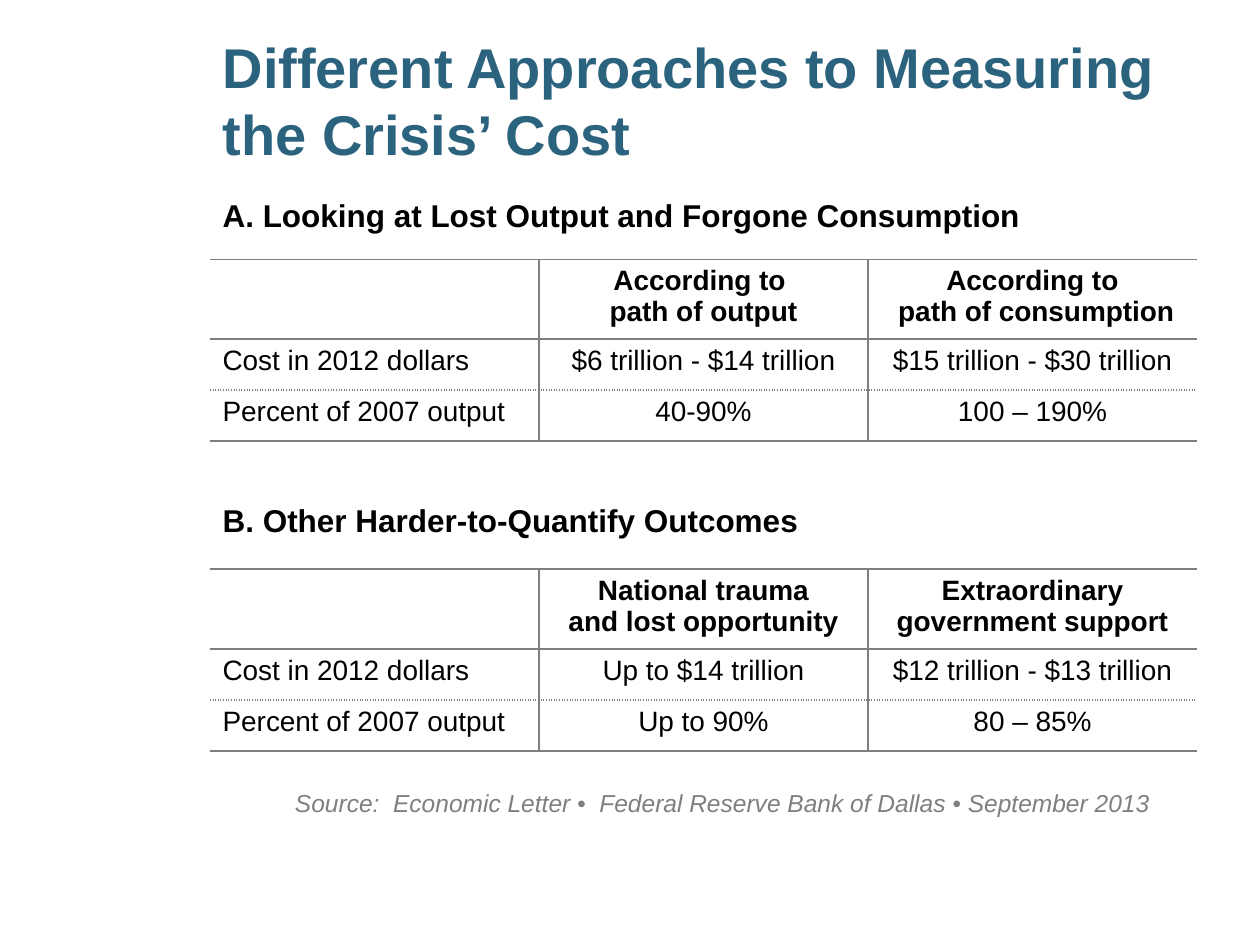
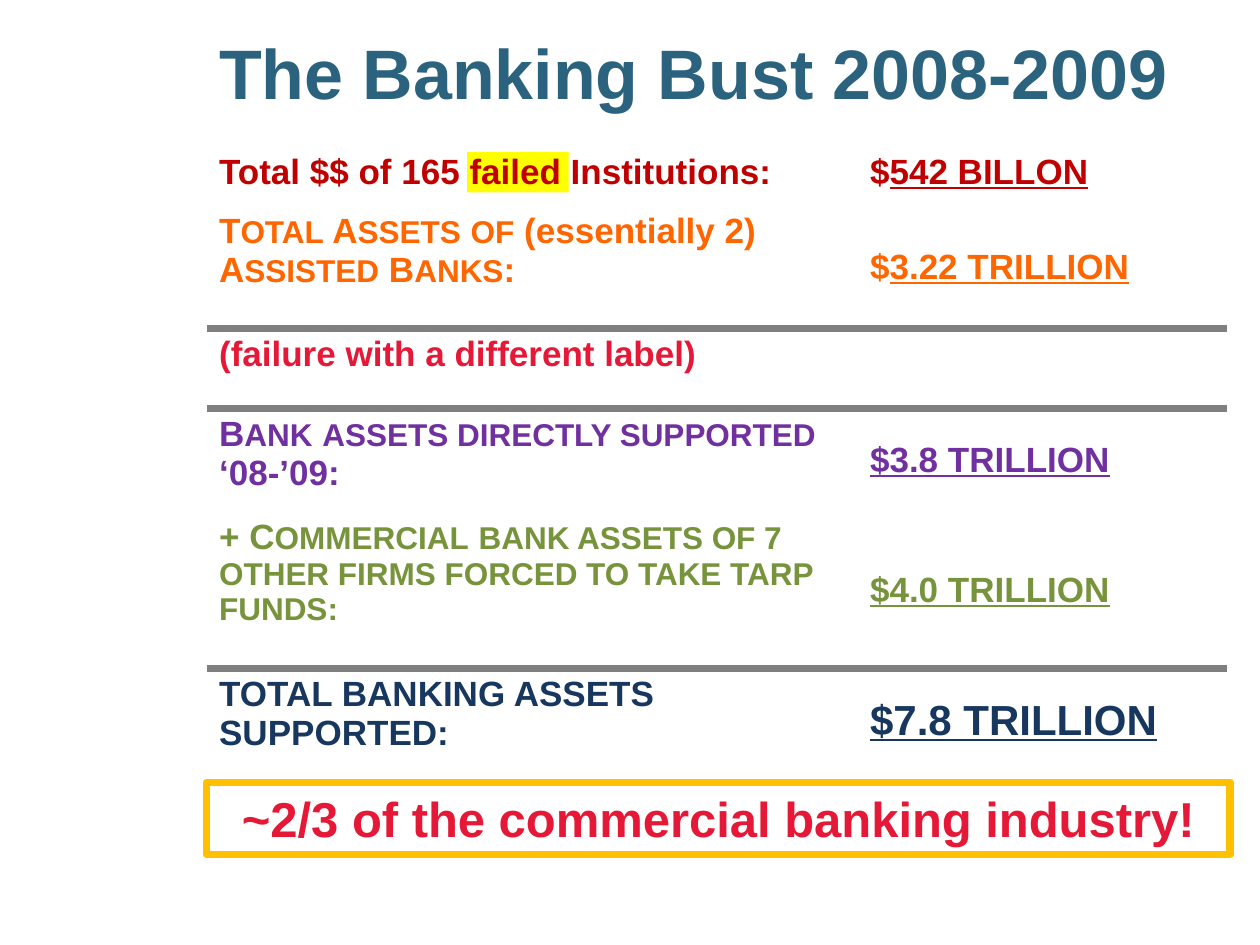
"""Build two slides on the cost of the crisis and the support given to banks."""
from dataclasses import dataclass
from itertools import cycle
from typing import Optional

from lxml import etree
from pptx import Presentation
from pptx.dml.color import RGBColor
from pptx.enum.shapes import MSO_SHAPE
from pptx.enum.text import MSO_ANCHOR, MSO_AUTO_SIZE, PP_ALIGN
from pptx.oxml import parse_xml
from pptx.oxml.ns import nsdecls, qn
from pptx.util import Pt

LEFT, CENTER = PP_ALIGN.LEFT, PP_ALIGN.CENTER
TOP, MIDDLE = MSO_ANCHOR.TOP, MSO_ANCHOR.MIDDLE
NO_AUTOFIT = MSO_AUTO_SIZE.NONE
RECTANGLE = MSO_SHAPE.RECTANGLE

FONT = "Arial"
TEAL, GRAY, BLACK, RED = "2B637F", "7F7F7F", "000000", "E51937"
YELLOW, GOLD = "FFFF00", "FFC000"
PLAIN_TABLE_STYLE = "{2D5ABB26-0587-4C30-8999-92F81FD0307C}"
TITLE_ONLY = 5
BORDER_SIDES = ("L", "R", "T", "B")


@dataclass(frozen=True)
class Box:
    """Place and size in points."""
    left: float
    top: float
    width: float
    height: float


@dataclass(frozen=True)
class Style:
    """Look of one run of text."""
    size: float
    color: str = BLACK
    bold: bool = True
    italic: bool = False
    underline: bool = False


@dataclass(frozen=True)
class Rule:
    """Line along a cell edge."""
    width: float
    dash: str = "solid"


@dataclass(frozen=True)
class CostSection:
    """Headed block of the cost table."""
    heading: str
    heading_height: float
    heading_margin: float
    approaches: tuple[tuple[str, ...], ...]
    costs: tuple[str, ...]
    shares: tuple[str, ...]


@dataclass(frozen=True)
class AssetLine:
    """Row of the bank table; label parts alternate large and small."""
    height: float
    color: str
    label: tuple[tuple[str, ...], ...]
    prefix: str = ""
    amount: str = ""
    amount_size: float = 20
    amount_anchor: MSO_ANCHOR = MIDDLE
    rule_below: Optional[Rule] = None


THIN, DOTTED, THICK = Rule(1), Rule(1, "sysDot"), Rule(4.5)
HEADING = Style(18)
APPROACH = Style(16)
FIGURE = Style(16, bold=False)
CITATION = Style(14, GRAY, bold=False, italic=True)
VERDICT = Style(28, RED)

COST_SECTIONS = (
    CostSection(
        "A. Looking at Lost Output and Forgone Consumption", 38.2, 3.6,
        (("According to ", "path of output"), ("According to", " path of consumption")),
        ("$6 trillion - $14 trillion", "$15 trillion - $30 trillion"),
        ("40-90%", "100 – 190%")),
    CostSection(
        "B. Other Harder-to-Quantify Outcomes", 73.2, 36,
        (("National trauma", "and lost opportunity"), ("Extraordinary government support",)),
        ("Up to $14 trillion", "$12 trillion - $13 trillion"),
        ("Up to 90%", "80 – 85%")),
)
APPROACH_HEIGHT, FIGURE_HEIGHT = 45.5, 29.2

ASSET_LINES = (
    AssetLine(33.8, "C00000", (("Total $$ of 165 failed Institutions:",),),
              "$", "542 BILLON", amount_anchor=TOP),
    AssetLine(70.6, "FF6600",
              (("T", "OTAL", " A", "SSETS", " ", "OF", " (essentially 2) A",
                "SSISTED", " B", "ANKS", ":"),),
              "$", "3.22 TRILLION", rule_below=THICK),
    AssetLine(45.4, RED, (("(failure with a different label)",),)),
    AssetLine(59, "7030A0",
              (("B", "ANK", " ", "ASSETS DIRECTLY SUPPORTED"), ("‘08-’09:",)),
              amount="$3.8 TRILLION"),
    AssetLine(90, "77933C",
              (("+ C", "OMMERCIAL", " ",
                "BANK ASSETS OF 7 OTHER FIRMS FORCED TO TAKE TARP FUNDS:"),),
              amount="$4.0 TRILLION", rule_below=THICK),
    AssetLine(59, "17375E", (("TOTAL BANKING ASSETS SUPPORTED:",),),
              amount="$7.8 TRILLION", amount_size=24),
)


def rgb(color: str) -> RGBColor:
    """Turn a hex string into a colour."""
    return RGBColor.from_string(color)


def place(box: Box) -> tuple:
    """Give a box as four lengths."""
    return Pt(box.left), Pt(box.top), Pt(box.width), Pt(box.height)


def add_run(paragraph, text: str, style: Style) -> None:
    """Append one styled run."""
    run = paragraph.add_run()
    run.text = text
    font = run.font
    font.name, font.size = FONT, Pt(style.size)
    font.bold, font.italic, font.underline = style.bold, style.italic, style.underline
    font.color.rgb = rgb(style.color)


def write(frame, paragraphs: list, align=LEFT) -> None:
    """Fill a text frame with paragraphs, each a list of (text, style) runs."""
    for index, runs in enumerate(paragraphs):
        paragraph = frame.add_paragraph() if index else frame.paragraphs[0]
        paragraph.alignment = align
        for text, style in runs:
            add_run(paragraph, text, style)


def add_titled_slide(deck, title: str, box: Box, size: float):
    """Add a slide with a teal title."""
    slide = deck.slides.add_slide(deck.slide_layouts[TITLE_ONLY])
    heading = slide.shapes.title
    heading.left, heading.top, heading.width, heading.height = place(box)
    frame = heading.text_frame
    frame.word_wrap, frame.auto_size = True, NO_AUTOFIT
    frame.vertical_anchor = MIDDLE
    write(frame, [[(title, Style(size, TEAL))]])
    return slide


def add_plain_table(slide, box: Box, heights: list[float], widths: list[float]):
    """Add an unstyled table with the given rows and columns."""
    table = slide.shapes.add_table(len(heights), len(widths), *place(box)).table
    table.first_row = table.horz_banding = False
    table._tbl.tblPr.find(qn("a:tableStyleId")).text = PLAIN_TABLE_STYLE
    for row, height in zip(table.rows, heights):
        row.height = Pt(height)
    for column, width in zip(table.columns, widths):
        column.width = Pt(width)
    for cell in table.iter_cells():
        cell.fill.background()
    return table


def border_xml(side: str, rule: Rule) -> etree._Element:
    """Make the line element of one cell edge."""
    return parse_xml(
        f'<a:ln{side} {nsdecls("a")} w="{Pt(rule.width)}">'
        f'<a:solidFill><a:srgbClr val="{GRAY}"/></a:solidFill>'
        f'<a:prstDash val="{rule.dash}"/></a:ln{side}>')


def set_borders(cell, **rules: Optional[Rule]) -> None:
    """Draw the given edges (L, R, T, B) of a cell."""
    drawn = [side for side in BORDER_SIDES if rules.get(side)]
    properties = cell._tc.get_or_add_tcPr()
    for index, side in enumerate(drawn):
        properties.insert(index, border_xml(side, rules[side]))


def add_section(table, first_row: int, section: CostSection) -> None:
    """Write one section of the cost table."""
    heading = table.cell(first_row, 0)
    heading.merge(table.cell(first_row, 2))
    heading.margin_top = Pt(section.heading_margin)
    write(heading.text_frame, [[(section.heading, HEADING)]])
    for column, lines in enumerate(section.approaches, 1):
        frame = table.cell(first_row + 1, column).text_frame
        write(frame, [[(line, APPROACH)] for line in lines], CENTER)
    measures = (("Cost in 2012 dollars", section.costs),
                ("Percent of 2007 output", section.shares))
    for row, (measure, values) in enumerate(measures, first_row + 2):
        write(table.cell(row, 0).text_frame, [[(measure, FIGURE)]])
        for column, value in enumerate(values, 1):
            write(table.cell(row, column).text_frame, [[(value, FIGURE)]], CENTER)


def build_cost_slide(deck) -> None:
    """Build the slide that compares cost estimates."""
    slide = add_titled_slide(deck, "Different Approaches to Measuring the Crisis’ Cost",
                             Box(120, 12, 564, 90), 32)
    heights = [height for section in COST_SECTIONS
               for height in (section.heading_height, APPROACH_HEIGHT,
                              FIGURE_HEIGHT, FIGURE_HEIGHT)]
    table = add_plain_table(slide, Box(120, 110, 564, sum(heights)), heights, [188] * 3)
    section_rows = len(heights) // len(COST_SECTIONS)
    for index, section in enumerate(COST_SECTIONS):
        add_section(table, index * section_rows, section)
    edges = [None] + [THIN, THIN, DOTTED, THIN] * len(COST_SECTIONS)
    for row in range(len(heights)):
        divider = THIN if row % section_rows else None
        for column in range(3):
            set_borders(table.cell(row, column), T=edges[row], B=edges[row + 1],
                        L=divider if column > 0 else None,
                        R=divider if column < 2 else None)
    source = slide.shapes.add_textbox(*place(Box(161.5, 446.5, 509, 24.2))).text_frame
    source.word_wrap = False
    write(source, [[("Source:  Economic Letter •  Federal Reserve Bank of Dallas"
                     " • September 2013", CITATION)]])


def add_rectangle(slide, box: Box):
    """Add a rectangle without shadow, fill or line."""
    rectangle = slide.shapes.add_shape(RECTANGLE, *place(box))
    rectangle.shadow.inherit = False
    rectangle.fill.background()
    rectangle.line.fill.background()
    return rectangle


def build_bank_slide(deck) -> None:
    """Build the slide that adds up supported bank assets."""
    slide = add_titled_slide(deck, "The Banking Bust 2008-2009",
                             Box(118, 9, 564, 63.5), 40)
    highlight = add_rectangle(slide, Box(267, 87, 58, 23))
    highlight.fill.solid()
    highlight.fill.fore_color.rgb = rgb(YELLOW)

    heights = [line.height for line in ASSET_LINES]
    table = add_plain_table(slide, Box(118, 83.5, 583, sum(heights)), heights, [372, 211])
    rule_above = None
    for row, line in enumerate(ASSET_LINES):
        label, amount = table.cell(row, 0), table.cell(row, 1)
        write(label.text_frame,
              [[(part, Style(size, line.color)) for part, size in zip(parts, cycle((20, 18)))]
               for parts in line.label])
        amount.vertical_anchor = line.amount_anchor
        pieces = ((line.prefix, False), (line.amount, True))
        write(amount.text_frame,
              [[(text, Style(line.amount_size, line.color, underline=underlined))
                for text, underlined in pieces if text]])
        for cell in (label, amount):
            set_borders(cell, T=rule_above, B=line.rule_below)
        rule_above = line.rule_below

    verdict = add_rectangle(slide, Box(118, 447, 585, 41.2))
    verdict.line.color.rgb = rgb(GOLD)
    verdict.line.width = Pt(4.25)
    verdict.text_frame.word_wrap = True
    verdict.text_frame.vertical_anchor = MIDDLE
    write(verdict.text_frame, [[("~2/3 of the commercial banking industry!", VERDICT)]], CENTER)


def main() -> None:
    """Build and save the deck."""
    deck = Presentation()
    deck.slide_width, deck.slide_height = Pt(720), Pt(540)
    build_cost_slide(deck)
    build_bank_slide(deck)
    deck.save("out.pptx")


if __name__ == "__main__":
    main()
